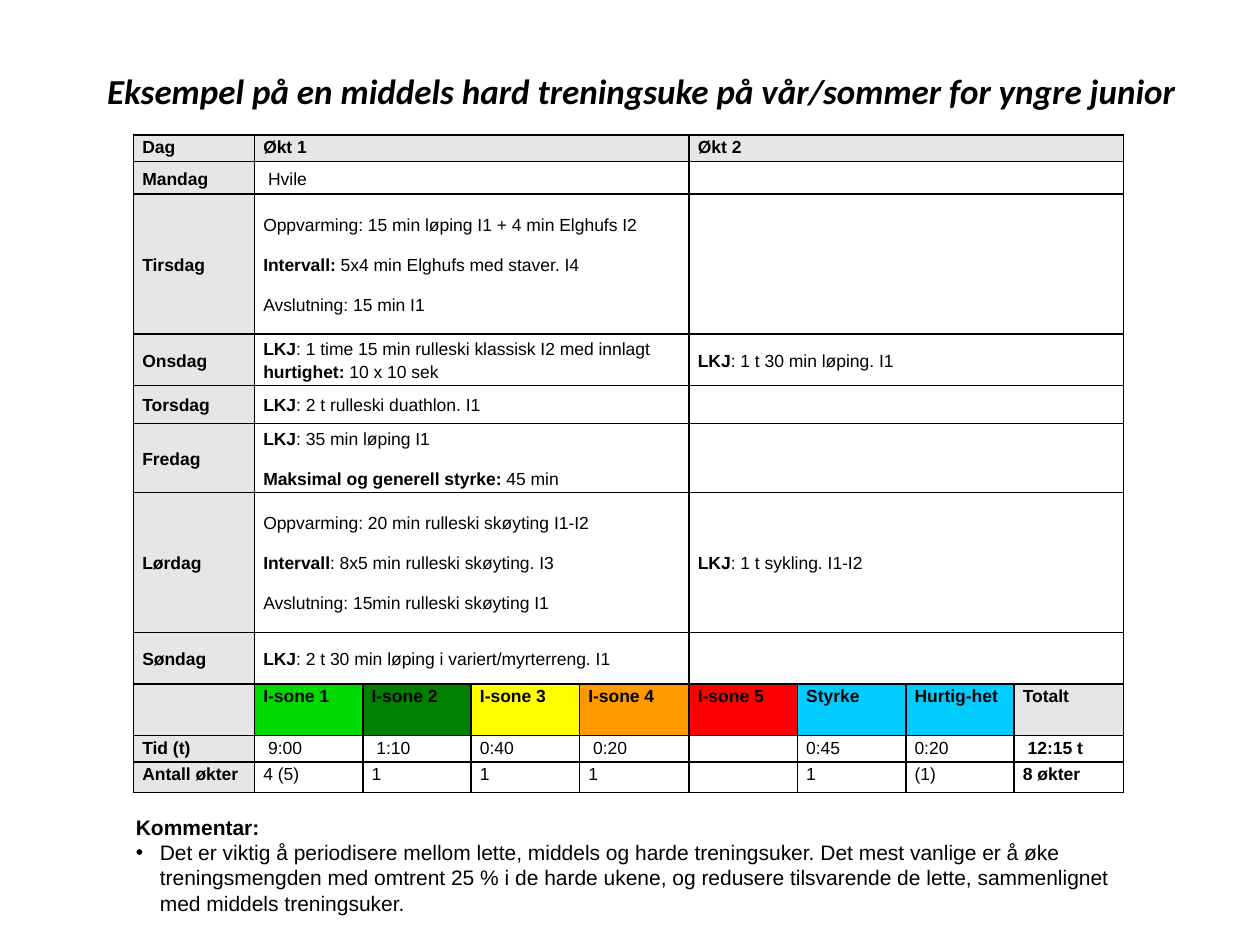
from dataclasses import dataclass

from lxml import etree
from pptx import Presentation
from pptx.dml.color import RGBColor
from pptx.enum.text import MSO_ANCHOR, MSO_AUTO_SIZE, PP_ALIGN
from pptx.oxml.ns import qn
from pptx.util import Emu, Pt

PX = 9144
TOP, MIDDLE = MSO_ANCHOR.TOP, MSO_ANCHOR.MIDDLE
LEFT, JUSTIFY = PP_ALIGN.LEFT, PP_ALIGN.JUSTIFY
GROW = MSO_AUTO_SIZE.SHAPE_TO_FIT_TEXT
NO_RESIZE = MSO_AUTO_SIZE.NONE
BLACK, GREY = "000000", "E6E6E6"
COLUMNS = [96, 86, 86, 86, 87, 86, 86, 86, 87]
HEADER_HEIGHT = 21
SPAN = 4


@dataclass
class Day:
    name: str
    height: int
    first: list[str]
    second: str = ""
    align: PP_ALIGN = JUSTIFY


@dataclass
class Total:
    heading: str
    fill: str
    time: str
    sessions: str


@dataclass
class SummaryRow:
    height: int
    texts: list[str]
    fills: list[str]


DAYS = [
    Day("Mandag", 26, [" Hvile"]),
    Day("Tirsdag", 111, ["Oppvarming: 15 min løping I1 + 4 min Elghufs I2",
                         "*Intervall: *5x4 min Elghufs med staver. I4",
                         "Avslutning: 15 min I1"]),
    Day("Onsdag", 41, ["*LKJ*: 1 time 15 min rulleski klassisk I2 med innlagt "
                       "*hurtighet: *10 x 10 sek"],
        "*LKJ*: 1 t 30 min løping. I1", LEFT),
    Day("Torsdag", 30, ["*LKJ*: 2 t rulleski duathlon. I1"]),
    Day("Fredag", 55, ["*LKJ*: 35 min løping I1",
                       "*Maksimal og generell styrke:* 45 min"]),
    Day("Lørdag", 111, ["Oppvarming: 20 min rulleski skøyting I1-I2",
                        "*Intervall*: 8x5 min rulleski skøyting. I3",
                        "Avslutning: 15min rulleski skøyting I1"],
        "*LKJ*: 1 t sykling. I1-I2"),
    Day("Søndag", 41, ["*LKJ*: 2 t 30 min løping i variert/myrterreng. I1"],
        align=LEFT),
]
TOTALS = [
    Total("", GREY, "*Tid (t)*", "*Antall økter*"),
    Total("*I-sone 1*", "00D900", " 9:00", "4 (5)"),
    Total("*I-sone 2*", "008000", " 1:10", "1"),
    Total("*I-sone 3*", "FFFF00", "0:40", "1"),
    Total("*I-sone 4*", "FF9900", " 0:20", "1"),
    Total("*I-sone 5*", "FF0000", "", ""),
    Total("*Styrke*", "00CCFF", "0:45", "1"),
    Total("*Hurtig-het*", "00CCFF", "0:20", "(1)"),
    Total("*Totalt*", GREY, "* 12:15 t*", "*8 økter*"),
]
LABEL_FILLS = [GREY] + [""] * (len(COLUMNS) - 1)
SUMMARY = [
    SummaryRow(41, [total.heading for total in TOTALS],
               [total.fill for total in TOTALS]),
    SummaryRow(21, [total.time for total in TOTALS], LABEL_FILLS),
    SummaryRow(24, [total.sessions for total in TOTALS], LABEL_FILLS),
]
COMMENT = (
    "Det er viktig å periodisere mellom lette, middels og harde treningsuker. "
    "Det mest vanlige er å øke treningsmengden med omtrent 25 % i de harde ukene, "
    "og redusere tilsvarende de lette, sammenlignet med middels treningsuker."
)


def px(length: int) -> Emu:
    return Emu(length * PX)


def color(code: str) -> RGBColor:
    return RGBColor.from_string(code)


def apply(target, values: dict) -> None:
    for name, value in values.items():
        setattr(target, name, value)


def place(shape, left: int, top: int, width: int, height: int) -> None:
    apply(shape, {"left": px(left), "top": px(top),
                  "width": px(width), "height": px(height)})


def write(para, text: str, size: int, font: str = "Arial", italic: bool = False) -> None:
    for index, part in enumerate(text.split("*")):
        if part:
            span = para.add_run()
            span.text = part
            apply(span.font, {"name": font, "size": Pt(size),
                              "bold": index % 2 == 1, "italic": italic})
            span.font.color.rgb = color(BLACK)


def add_borders(cell) -> None:
    properties = cell._tc.get_or_add_tcPr()
    for index, side in enumerate(("lnL", "lnR", "lnT", "lnB")):
        line = etree.Element(qn(f"a:{side}"), w=str(Pt(1)))
        fill = etree.SubElement(line, qn("a:solidFill"))
        etree.SubElement(fill, qn("a:srgbClr"), val=BLACK)
        properties.insert(index, line)


def style_cell(cell) -> None:
    apply(cell, {"margin_left": px(7), "margin_right": px(7),
                 "margin_top": 0, "margin_bottom": 0})
    cell.fill.background()
    add_borders(cell)
    para = cell.text_frame.paragraphs[0]
    etree.SubElement(para._p, qn("a:endParaRPr"), sz="1000")


def fill_cell(cell, lines: list[str], fill: str = "", anchor: MSO_ANCHOR = TOP,
              align: PP_ALIGN = JUSTIFY) -> None:
    cell.vertical_anchor = anchor
    if fill:
        cell.fill.solid()
        cell.fill.fore_color.rgb = color(fill)
    frame = cell.text_frame
    for index, line in enumerate(lines):
        para = frame.add_paragraph() if index else frame.paragraphs[0]
        apply(para, {"alignment": align, "line_spacing": 1.15,
                     "space_before": Pt(10)})
        write(para, line, 10)


def add_title(slide) -> None:
    title = slide.shapes.title
    place(title, 75, 44, 900, 125)
    frame = title.text_frame
    apply(frame, {"vertical_anchor": MIDDLE, "word_wrap": True,
                  "auto_size": NO_RESIZE, "margin_bottom": px(74)})
    para = frame.paragraphs[0]
    para.alignment = LEFT
    write(para, "*Eksempel på en middels hard treningsuke på vår/sommer "
                "for yngre junior*", 20, "Calibri", True)


def add_week_table(slide) -> None:
    heights = [HEADER_HEIGHT] + [row.height for row in DAYS + SUMMARY]
    table = slide.shapes.add_table(
        len(heights), len(COLUMNS), px(106), px(107),
        px(sum(COLUMNS)), px(sum(heights))).table
    apply(table, {"first_row": False, "horz_banding": False})
    for column, width in zip(table.columns, COLUMNS):
        column.width = px(width)
    for row, height in zip(table.rows, heights):
        row.height = px(height)
    for cell in table.iter_cells():
        style_cell(cell)
    for row in range(len(DAYS) + 1):
        for start in (1, 1 + SPAN):
            table.cell(row, start).merge(table.cell(row, start + SPAN - 1))
    for column, text in ((0, "*Dag*"), (1, "*Økt 1*"), (1 + SPAN, "*Økt 2*")):
        fill_cell(table.cell(0, column), [text], GREY)
    for row, day in enumerate(DAYS, 1):
        fill_cell(table.cell(row, 0), [f"*{day.name}*"], GREY, MIDDLE)
        fill_cell(table.cell(row, 1), day.first, "", MIDDLE, day.align)
        fill_cell(table.cell(row, 1 + SPAN), [day.second], "", MIDDLE)
    for row, summary in enumerate(SUMMARY, 1 + len(DAYS)):
        for column, (text, fill) in enumerate(zip(summary.texts, summary.fills)):
            fill_cell(table.cell(row, column), [text], fill)


def add_comment(slide) -> None:
    box = slide.shapes.add_textbox(px(98), px(641), px(811), px(91))
    frame = box.text_frame
    apply(frame, {"word_wrap": True, "vertical_anchor": MIDDLE, "auto_size": GROW})
    write(frame.paragraphs[0], "*Kommentar:*", 12)
    para = frame.add_paragraph()
    write(para, COMMENT, 12)
    properties = para._p.get_or_add_pPr()
    properties.set("marL", str(px(19)))
    properties.set("indent", str(-px(19)))
    etree.SubElement(properties, qn("a:buFont"), typeface="Arial")
    etree.SubElement(properties, qn("a:buChar"), char="•")


def main() -> None:
    deck = Presentation()
    apply(deck, {"slide_width": px(1000), "slide_height": px(750)})
    page = deck.slides.add_slide(deck.slide_layouts[5])
    add_title(page)
    add_week_table(page)
    add_comment(page)
    deck.save("out.pptx")


if __name__ == "__main__":
    main()
